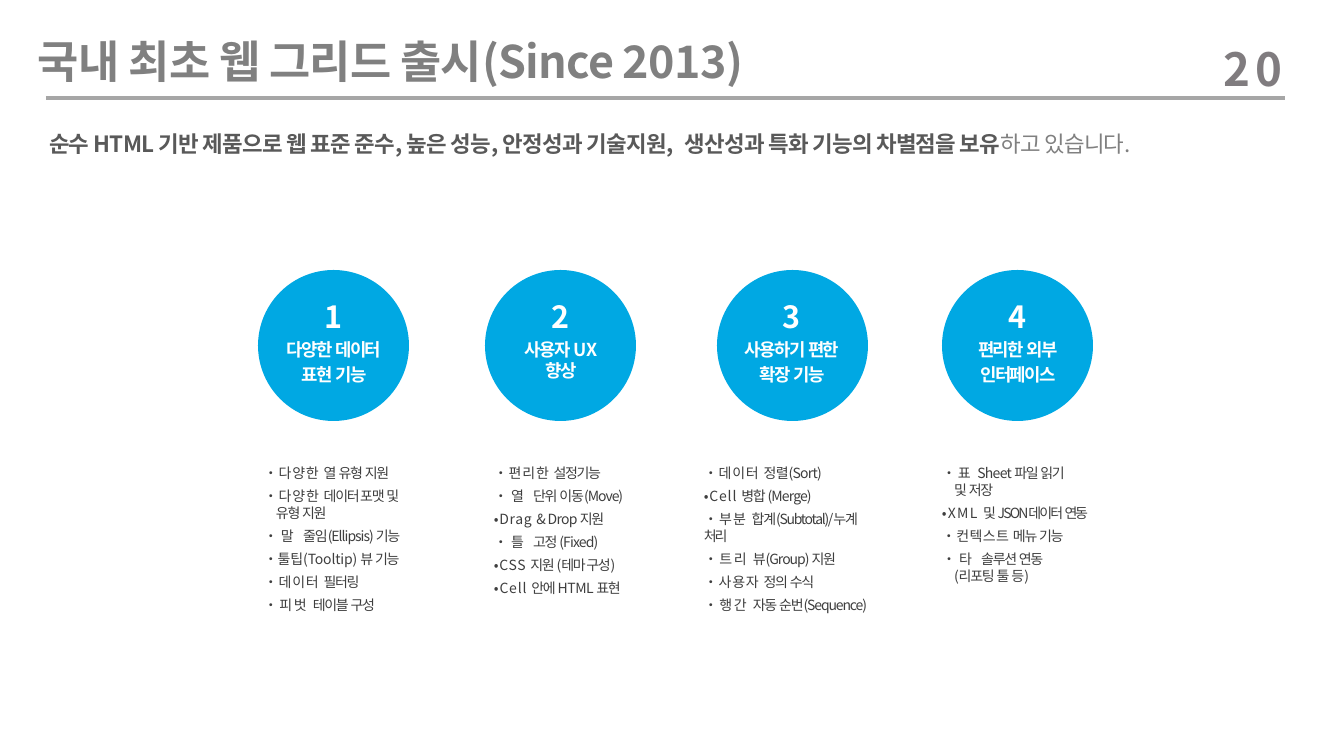
from copy import deepcopy

from lxml import etree
from pptx import Presentation, util as u
from pptx.dml.color import RGBColor
from pptx.enum import shapes, text
from pptx.oxml.ns import qn

PX = 914400 / 100.8
FACE = "Noto Sans CJK KR"
GREY, BLUE, WHITE, INK = "808080", "00A8E3", "FFFFFF", "3E3E3E"

# Runs are (wording, letter spacing in points); "\v" is a line break.
TITLE = [("국내 최초 웹 그리드 출시(Since 2013)", -0.5)]
PAGE = [("20", 3)]
LEAD = [
    ("순수 HTML 기반 제품으로 웹 표준 준수, 높은 성능, 안정성과 기술지원,", -0.5),
    (" ", 4),
    ("생산성과 특화 기능의 차별점을 보유", -0.5),
]
TAIL = [("하고 있습니다.", -0.5)]

COLUMNS = [
    {
        "disc": 258, "head": (282, 104), "list": (263, 140),
        "name": [("다양한 ", -1.1), ("데이터\v", -1.2), ("표현 ", -1.1), ("기능", -1.2)],
        "items": [
            [("다양한 ", 0.6), ("열 ", -0.7), ("유형 ", -0.9), ("지원", -1)],
            [("다양한 ", 0.6), ("데이터 포맷 ", -0.9), ("및\v", -0.7),
             ("유형 ", -0.9), ("지원", -1)],
            [("말 ", 2.2), ("줄임(Ellipsis) ", -0.7), ("기능", -1)],
            [("툴팁(Tooltip) ", -0.1), ("뷰 ", -0.7), ("기능", -1)],
            [("데이터 ", 0.6), ("필터링", -1)],
            [("피벗 ", 1.1), ("테이블 ", -0.9), ("구성", -1)],
        ],
    },
    {
        "disc": 485, "head": (503, 116), "list": (493, 133),
        "name": [("사용자 ", -1.1), ("UX\v", -0.1), ("향상", -1.2)],
        "lead": {"space_before": u.Pt(2.9)},
        "items": [
            [("편리한 ", 0.6), ("설정기능", -1)],
            [("열 ", 2.2), ("단위 ", -0.9), ("이동(Move)", -0.7)],
            [("Drag ", 0.5), ("& Drop ", -0.5), ("지원", -1)],
            [("틀 ", 2.2), ("고정 ", -0.9), ("(Fixed)", -0.6)],
            [("CSS ", 0.5), ("지원 (테마 구성)", -0.9)],
            [("Cell ", 0.6), ("안에 ", -0.9), ("HTML ", -0.3), ("표현", -1)],
        ],
    },
    {
        "disc": 717, "head": (740, 104), "list": (703, 175),
        "name": [("사용하기 ", -1.1), ("편한\v", -1.2), ("확장 ", -1.1), ("기능", -1.2)],
        "items": [
            [("데이터 ", 0.6), ("정렬(Sort)", -0.5)],
            [("Cell ", 0.6), ("병합 ", -0.9), ("(Merge)", -0.6)],
            [("부분 ", 0.9), ("합계(Subtotal)/누계 ", -0.9), ("처리", -1.5)],
            [("트리 ", 1.1), ("뷰(Group) ", -0.7), ("지원", -1)],
            [("사용자 ", 0.6), ("정의 ", -0.9), ("수식", -1)],
            [("행간 ", 1.1), ("자동 ", -0.9), ("순번(Sequence)", -0.8)],
        ],
    },
    {
        "disc": 942, "head": (974, 88), "list": (941, 163),
        "name": [("편리한 ", -1.1), ("외부\v인터페이스", -1.2)],
        "items": [
            [("표 ", 1.3), ("Sheet ", -0.5), ("파일 ", -0.9), ("읽기\v", -1),
             ("및 ", -0.7), ("저장", -1)],
            [("XML ", 0.9), ("및 ", -1), ("JSON데이터 ", -1.3), ("연동", -1.5)],
            [("컨텍스트 ", 0.3), ("메뉴 ", -0.9), ("기능", -1)],
            [("타 ", 2.2), ("솔루션 ", -0.9), ("연동\v", -1), ("(리포팅 ", -0.9),
             ("툴 ", -0.7), ("등)", -0.9)],
        ],
    },
]


def px(*sizes):
    return [round(size * PX) for size in sizes]


def tint(code):
    return RGBColor.from_string(code)


def apply(target, values):
    for key, value in values.items():
        setattr(target, key, value)


def write(para, runs, size, color, bold=False):
    for words, gap in runs:
        for at, part in enumerate(words.split("\v")):
            if at:
                # A break needs the size of its text, or its line grows taller.
                para.add_line_break()
                last = para.runs[-1]._r.rPr
                para._p[-1].append(deepcopy(last))
            if not part:
                continue
            run = para.add_run()
            run.text = part
            apply(run.font, {"name": FACE, "size": u.Pt(size), "bold": bold})
            run.font.color.rgb = tint(color)
            mark = run.font._element
            mark.set("spc", str(round(gap * 100)))
            etree.SubElement(mark, qn("a:ea")).set("typeface", FACE)


def add_box(slide, *area):
    frame = slide.shapes.add_textbox(*px(*area)).text_frame
    sides = ("left", "top", "right", "bottom")
    apply(frame, {f"margin_{side}": 0 for side in sides})
    apply(frame, {"word_wrap": True, "auto_size": text.MSO_AUTO_SIZE.SHAPE_TO_FIT_TEXT})
    return frame


def add_top(slide):
    rule = slide.shapes.add_connector(shapes.MSO_CONNECTOR.STRAIGHT, *px(46, 98, 1285, 98))
    rule.line.width = u.Pt(2.25)
    rule.line.color.rgb = tint("A6A6A6")
    etree.SubElement(rule._element.spPr, qn("a:effectLst"))

    title = add_box(slide, 38, 34, 1051, 54)
    title.vertical_anchor = text.MSO_ANCHOR.MIDDLE
    write(title.paragraphs[0], TITLE, 32, GREY, True)
    page = add_box(slide, 1224, 41, 64, 55)
    write(page.paragraphs[0], PAGE, 32.6, "807C7F", True)

    lead = add_box(slide, 49, 123, 1251, 34).paragraphs[0]
    lead.line_spacing = 1.25
    write(lead, LEAD, 16, "595959", True)
    write(lead, TAIL, 16, GREY)


def add_disc(slide, rank, col):
    disc = slide.shapes.add_shape(shapes.MSO_SHAPE.OVAL, *px(col["disc"], 270, 151, 151))
    disc.shadow.inherit = False
    disc.fill.solid()
    disc.fill.fore_color.rgb = tint(BLUE)
    disc.line.fill.background()

    left, width = col["head"]
    head = add_box(slide, left, 298, width, 88)
    digit, name = head.paragraphs[0], head.add_paragraph()
    apply(name, col.get("lead", {"line_spacing": 1.19}))
    for para in (digit, name):
        para.alignment = text.PP_ALIGN.CENTER
    write(digit, [(str(rank), 1.9)], 21.8, WHITE, True)
    write(name, col["name"], 12.7, WHITE, True)


def add_list(slide, col):
    left, width = col["list"]
    frame = add_box(slide, left, 465, width, 147)
    for at, item in enumerate(col["items"]):
        para = frame.add_paragraph() if at else frame.paragraphs[0]
        if at:
            para.space_before = u.Pt(4.3)
        hang = any("\v" in words for words, _ in item)
        margin, indent = px(13, -12) if hang else px(1, 0)
        props = para._p.get_or_add_pPr()
        props.set("marL", str(margin))
        props.set("indent", str(indent))
        (first, gap), *rest = item
        write(para, [("•" + first, gap), *rest], 10, INK)


def main():
    deck = Presentation()
    deck.slide_width, deck.slide_height = px(1344, 756)
    slide = deck.slides.add_slide(deck.slide_layouts[6])
    add_top(slide)
    for rank, col in enumerate(COLUMNS, 1):
        add_disc(slide, rank, col)
        add_list(slide, col)
    deck.save("out.pptx")


if __name__ == "__main__":
    main()
